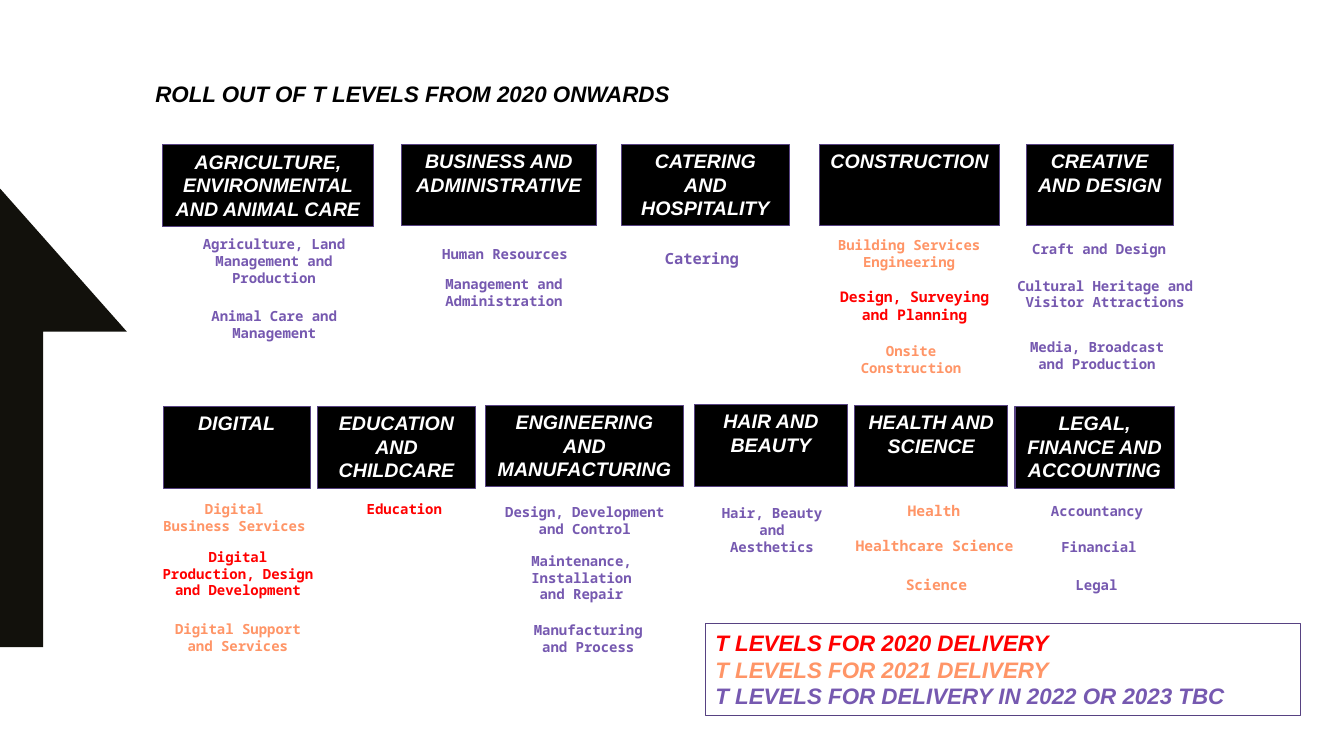
from dataclasses import dataclass

from pptx import Presentation
from pptx.dml.color import RGBColor
from pptx.enum.shapes import MSO_SHAPE
from pptx.enum.text import MSO_ANCHOR, PP_ALIGN
from pptx.util import Cm, Pt

RECTANGLE = MSO_SHAPE.RECTANGLE
TOP = MSO_ANCHOR.TOP
LEFT, CENTER = PP_ALIGN.LEFT, PP_ALIGN.CENTER
TITLE_ONLY = 5


@dataclass(frozen=True)
class Theme:
    heading_font: str = "Arial"
    course_font: str = "Noto Sans Mono"
    black: str = "000000"
    white: str = "FFFFFF"
    arrow: str = "12110C"
    border: str = "574282"
    red: str = "FF0000"
    orange: str = "FF9567"
    purple: str = "7659B0"
    title_size: float = 16
    sector_size: float = 14
    course_size: float = 10
    medium_size: float = 10.5
    large_size: float = 11


THEME = Theme()
RED, ORANGE, PURPLE = THEME.red, THEME.orange, THEME.purple
MEDIUM, LARGE = THEME.medium_size, THEME.large_size

TITLE = "ROLL OUT OF T LEVELS FROM 2020 ONWARDS"
ARROW_POINTS = [(1.09, 8.36), (3.2, 8.36), (0, 4.75), (0, 16.31), (1.09, 16.31)]
SECTOR_HEIGHT = 2.06

# Sector: name, left, top, width
SECTORS = [
    ("AGRICULTURE, ENVIRONMENTAL AND ANIMAL CARE", 4.09, 3.65, 5.33),
    ("BUSINESS AND ADMINISTRATIVE", 10.11, 3.63, 4.93),
    ("CATERING AND HOSPITALITY", 15.67, 3.63, 4.22),
    ("CONSTRUCTION", 20.65, 3.63, 4.55),
    ("CREATIVE AND DESIGN", 25.86, 3.63, 3.71),
    ("DIGITAL", 4.11, 10.24, 3.71),
    ("EDUCATION AND CHILDCARE", 8, 10.24, 3.99),
    ("ENGINEERING AND MANUFACTURING", 12.24, 10.21, 4.98),
    ("HAIR AND BEAUTY", 17.5, 10.19, 3.86),
    ("HEALTH AND SCIENCE", 21.54, 10.21, 3.86),
    ("LEGAL, FINANCE AND ACCOUNTING", 25.58, 10.24, 4.01),
]

# Course: paragraphs, colour, left, top, width, lines, then size if not standard
COURSES = [
    (["Agriculture, Land Management and Production"], PURPLE, 4.24, 5.82, 5.33, 3),
    (["Animal Care and Management"], PURPLE, 4.47, 7.62, 4.88, 2),
    (["Human Resources"], PURPLE, 10.87, 6.07, 3.71, 1),
    (["Management and Administration"], PURPLE, 10.26, 6.83, 4.88, 2),
    (["Catering"], PURPLE, 16.13, 6.15, 3.12, 1, LARGE),
    (["Building Services Engineering"], ORANGE, 20.55, 5.84, 4.72, 2),
    (["Design, Surveying and Planning"], RED, 20.55, 7.14, 5, 2, MEDIUM),
    (["Onsite Construction"], ORANGE, 20.75, 8.51, 4.42, 2),
    (["Craft and Design"], PURPLE, 25.35, 5.94, 4.7, 1),
    (["Cultural Heritage and Visitor Attractions"], PURPLE, 25.35, 6.86, 5, 2),
    (["Media, Broadcast and Production"], PURPLE, 25.45, 8.41, 4.39, 2),
    (["Digital", "Business Services"], ORANGE, 3.81, 12.5, 4.19, 2),
    (["Digital Production, Design and Development"], RED, 3.76, 13.69, 4.47, 3),
    (["Digital Support and Services"], ORANGE, 3.76, 15.52, 4.47, 2),
    (["Education"], RED, 8.41, 12.5, 3.56, 1),
    (["Design, Development", "and Control"], PURPLE, 11.71, 12.57, 6.05, 2),
    (["Maintenance, Installation", "and Repair"], PURPLE, 11.81, 13.79, 5.69, 3),
    (["Manufacturing", "and Process"], PURPLE, 12.45, 15.54, 4.75, 2),
    (["Hair, Beauty and", "Aesthetics"], PURPLE, 17.6, 12.6, 3.71, 3),
    (["Health"], ORANGE, 22.61, 12.52, 1.85, 1, MEDIUM),
    (["Healthcare Science"], ORANGE, 21.08, 13.41, 4.95, 1, MEDIUM),
    (["Science"], ORANGE, 22.56, 14.38, 2.08, 1, MEDIUM),
    (["Accountancy"], PURPLE, 26.16, 12.55, 2.97, 1),
    (["Financial"], PURPLE, 26.44, 13.44, 2.51, 1),
    (["Legal"], PURPLE, 26.82, 14.4, 1.63, 1),
]

LEGEND = [
    ("T LEVELS FOR 2020 DELIVERY", RED),
    ("T LEVELS FOR 2021 DELIVERY", ORANGE),
    ("T LEVELS FOR DELIVERY IN 2022 OR 2023 TBC", PURPLE),
]


class SlideBuilder:
    def __init__(self, slide, theme):
        self.slide = slide
        self.theme = theme

    def fill_text(self, frame, lines, size, font, italic, align, wrap=True):
        """Fill a text frame with (text, colour) paragraphs."""
        frame.word_wrap = wrap
        frame.vertical_anchor = TOP
        for index, (text, color) in enumerate(lines):
            para = frame.add_paragraph() if index else frame.paragraphs[0]
            para.text = text
            para.alignment = align
            para.line_spacing = 1.0
            para.space_before = Pt(0)
            para.font.name = font
            para.font.size = Pt(size)
            para.font.bold = True
            para.font.italic = italic
            para.font.color.rgb = RGBColor.from_string(color)

    def arrow(self, points):
        corners = [(Cm(x), Cm(y)) for x, y in points]
        outline = self.slide.shapes.build_freeform(*corners[0], scale=1.0)
        outline.add_line_segments(corners[1:], close=True)
        shape = outline.convert_to_shape()
        shape.shadow.inherit = False
        shape.fill.solid()
        shape.fill.fore_color.rgb = RGBColor.from_string(self.theme.arrow)
        shape.line.fill.background()

    def title(self, text, left, top, width, height):
        title = self.slide.shapes.title
        title.left, title.top = Cm(left), Cm(top)
        title.width, title.height = Cm(width), Cm(height)
        self.fill_text(title.text_frame, [(text, self.theme.black)], self.theme.title_size,
                       self.theme.heading_font, True, LEFT, wrap=False)

    def panel(self, lines, left, top, width, height, size, align, fill=None):
        box = self.slide.shapes.add_shape(RECTANGLE, Cm(left), Cm(top), Cm(width), Cm(height))
        box.shadow.inherit = False
        if fill:
            box.fill.solid()
            box.fill.fore_color.rgb = RGBColor.from_string(fill)
        else:
            box.fill.background()
        box.line.color.rgb = RGBColor.from_string(self.theme.border)
        box.line.width = Pt(0.75)
        self.fill_text(box.text_frame, lines, size, self.theme.heading_font, True, align)

    def course(self, paragraphs, color, left, top, width, line_count, size=None):
        height = 0.25 + 0.43 * line_count
        box = self.slide.shapes.add_textbox(Cm(left), Cm(top), Cm(width), Cm(height))
        self.fill_text(box.text_frame, [(text, color) for text in paragraphs],
                       size or self.theme.course_size, self.theme.course_font, False, CENTER,
                       wrap=line_count > 1)


def main():
    deck = Presentation()
    deck.slide_width, deck.slide_height = Cm(33.87), Cm(19.05)
    page = SlideBuilder(deck.slides.add_slide(deck.slide_layouts[TITLE_ONLY]), THEME)

    # Side arrow and title
    page.arrow(ARROW_POINTS)
    page.title(TITLE, 3.66, 1.88, 13.64, 0.94)

    # Sector headings
    for name, left, top, width in SECTORS:
        page.panel([(name, THEME.white)], left, top, width, SECTOR_HEIGHT,
                   THEME.sector_size, CENTER, THEME.black)

    # Courses under each sector
    for course in COURSES:
        page.course(*course)

    # Colour legend
    page.panel(LEGEND, 17.78, 15.72, 14.99, 2.31, THEME.title_size, LEFT)

    deck.save("out.pptx")


if __name__ == "__main__":
    main()
